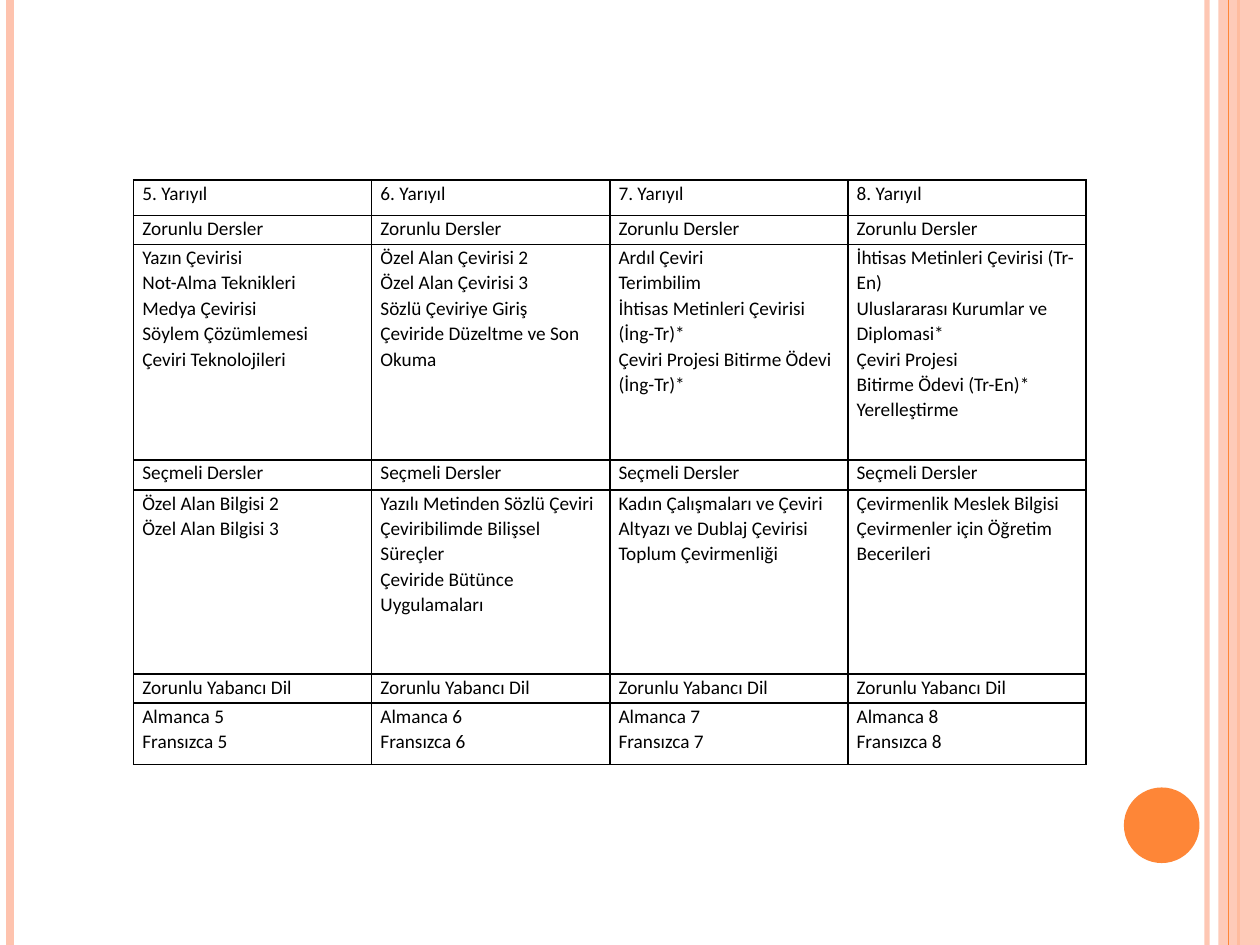
from lxml import etree
from pptx import Presentation, util as u
from pptx.dml.color import RGBColor
from pptx.enum import shapes
from pptx.oxml import ns

BLACK = RGBColor(0x00, 0x00, 0x00)
ORANGE = RGBColor(0xFE, 0x86, 0x37)
PEACH = RGBColor(0xFE, 0xC3, 0xAE)

BLANK_LAYOUT = 6
PAGE_WIDTH, PAGE_HEIGHT = 10, 7.5
TABLE_BOX = (1.06, 1.43, 7.56, 4.65)
ROW_HEIGHTS = (0.28, 0.23, 1.71, 0.24, 1.46, 0.23, 0.49)
TERMS = (5, 6, 7, 8)

REQUIRED_COURSES = (
    ("Yazın Çevirisi", "Not-Alma Teknikleri", "Medya Çevirisi",
     "Söylem Çözümlemesi", "Çeviri Teknolojileri"),
    ("Özel Alan Çevirisi 2", "Özel Alan Çevirisi 3", "Sözlü Çeviriye Giriş",
     "Çeviride Düzeltme ve Son Okuma"),
    ("Ardıl Çeviri", "Terimbilim", "İhtisas Metinleri Çevirisi (İng-Tr)*",
     "Çeviri Projesi Bitirme Ödevi (İng-Tr)*"),
    ("İhtisas Metinleri Çevirisi (Tr-En)", "Uluslararası Kurumlar ve Diplomasi*",
     "Çeviri Projesi", "Bitirme Ödevi (Tr-En)*", "Yerelleştirme"),
)
ELECTIVE_COURSES = (
    ("Özel Alan Bilgisi 2", "Özel Alan Bilgisi 3"),
    ("Yazılı Metinden Sözlü Çeviri", "Çeviribilimde Bilişsel Süreçler",
     "Çeviride Bütünce Uygulamaları"),
    ("Kadın Çalışmaları ve Çeviri", "Altyazı ve Dublaj Çevirisi",
     "Toplum Çevirmenliği"),
    ("Çevirmenlik Meslek Bilgisi", "Çevirmenler için Öğretim Becerileri"),
)

CELL_FORMAT = {"margin_left": u.Inches(0.07), "margin_right": u.Inches(0.07),
               "margin_top": 0, "margin_bottom": 0}
FONT_FORMAT = {"name": "Calibri", "size": u.Pt(11), "bold": False}


def apply_format(target, values):
    """Set each attribute in values on the target."""
    for name, value in values.items():
        setattr(target, name, value)


def set_alpha(color_parent, percent):
    """Make the solid colour inside an element partly opaque."""
    color = color_parent.find(".//" + ns.qn("a:srgbClr"))
    etree.SubElement(color, ns.qn("a:alpha"), val=str(percent * 1000))


def add_stripe(page, left, color, width, opacity=100):
    """Draw a full-height vertical line."""
    x = u.Inches(left)
    stripe = page.shapes.add_connector(
        shapes.MSO_CONNECTOR.STRAIGHT, x, 0, x, u.Inches(PAGE_HEIGHT))
    stripe.line.color.rgb = color
    stripe.line.width = u.Pt(width)
    properties = stripe.line._get_or_add_ln().getparent()
    etree.SubElement(properties, ns.qn("a:effectLst"))
    if opacity < 100:
        set_alpha(properties, opacity)


def add_filled_shape(page, kind, place, color, opacity=100):
    """Draw a borderless preset shape with a solid fill."""
    shape = page.shapes.add_shape(kind, *map(u.Inches, place))
    shape.shadow.inherit = False
    shape.fill.solid()
    shape.fill.fore_color.rgb = color
    shape.line.fill.background()
    if opacity < 100:
        set_alpha(shape.element.spPr, opacity)


def add_borders(cell):
    """Put a thin black line on every side of a cell."""
    properties = cell._tc.get_or_add_tcPr()
    for position, side in enumerate(("lnL", "lnR", "lnT", "lnB")):
        line = etree.Element(ns.qn(f"a:{side}"), w=str(u.Pt(1)))
        fill = etree.SubElement(line, ns.qn("a:solidFill"))
        etree.SubElement(fill, ns.qn("a:srgbClr"), val=str(BLACK))
        properties.insert(position, line)


def fill_cell(cell, lines):
    """Write one paragraph per line into a bordered, unfilled cell."""
    apply_format(cell, CELL_FORMAT)
    cell.fill.background()
    add_borders(cell)
    cell.text_frame.text = "\n".join(lines)
    for para in cell.text_frame.paragraphs:
        para.line_spacing = 1.07
        for span in para.runs:
            apply_format(span.font, FONT_FORMAT)
            span.font.color.rgb = BLACK


def add_course_table(page):
    """Lay out the courses with one column per term."""
    rows = (
        [(f"{term}. Yarıyıl",) for term in TERMS],
        [("Zorunlu Dersler",)] * len(TERMS),
        REQUIRED_COURSES,
        [("Seçmeli Dersler",)] * len(TERMS),
        ELECTIVE_COURSES,
        [("Zorunlu Yabancı Dil",)] * len(TERMS),
        [(f"Almanca {term}", f"Fransızca {term}") for term in TERMS],
    )
    frame = page.shapes.add_table(len(rows), len(TERMS), *map(u.Inches, TABLE_BOX))
    table = frame.table
    apply_format(table, {"first_row": False, "horz_banding": False})
    for row, height, contents in zip(table.rows, ROW_HEIGHTS, rows):
        row.height = u.Inches(height)
        for cell, lines in zip(row.cells, contents):
            fill_cell(cell, lines)


def main():
    """Build and save the course slide."""
    deck = Presentation()
    apply_format(deck, {"slide_width": u.Inches(PAGE_WIDTH),
                        "slide_height": u.Inches(PAGE_HEIGHT)})
    page = deck.slides.add_slide(deck.slide_layouts[BLANK_LAYOUT])
    add_stripe(page, 9.58, PEACH, 3, 93)
    add_stripe(page, 0.08, PEACH, 4.5)
    add_stripe(page, 9.83, ORANGE, 1.5)
    add_filled_shape(page, shapes.MSO_SHAPE.RECTANGLE,
                     (9.67, 0, 0.33, PAGE_HEIGHT), PEACH, 87)
    add_stripe(page, 9.75, ORANGE, 0.75)
    add_filled_shape(page, shapes.MSO_SHAPE.OVAL, (8.92, 6.25, 0.6, 0.6), ORANGE)
    add_course_table(page)
    deck.save("out.pptx")


if __name__ == "__main__":
    main()
